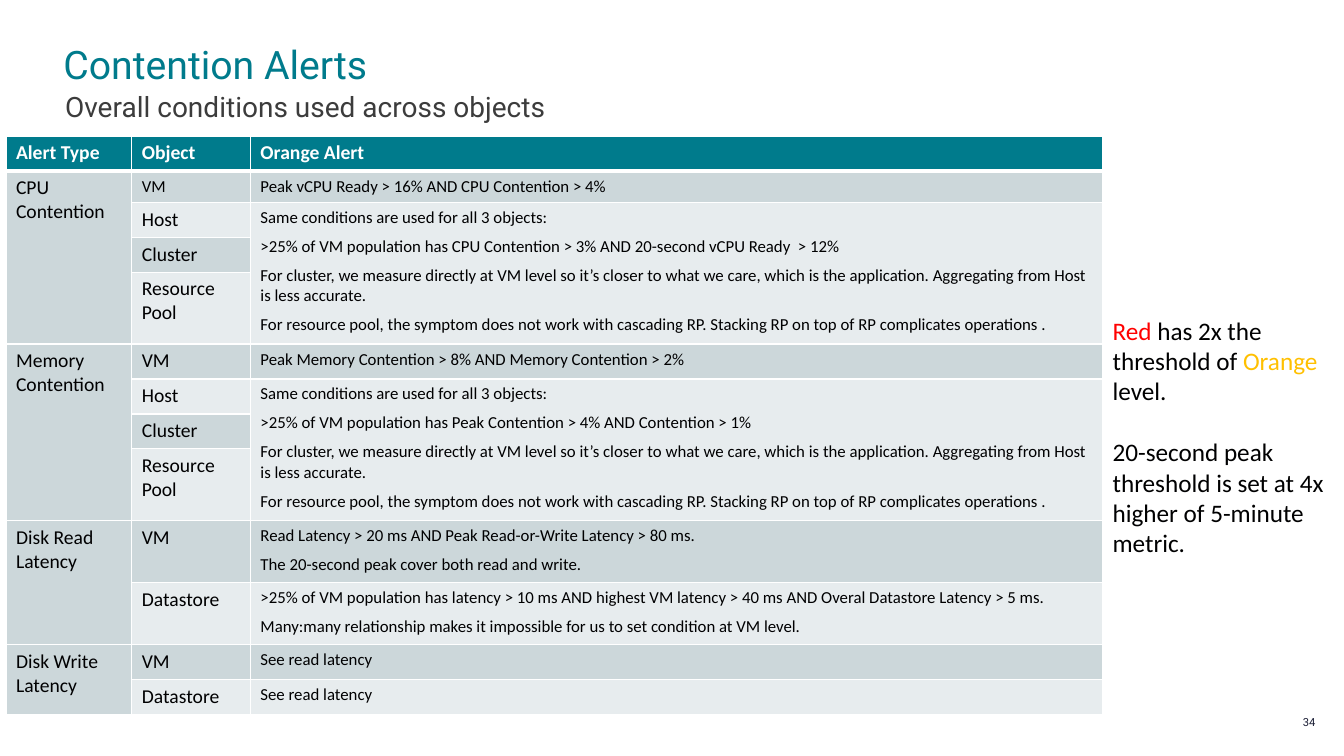
import pptx
import pptx.dml.color
import pptx.enum.shapes
import pptx.enum.text
import pptx.oxml
import pptx.oxml.ns
import pptx.util

Cm, Pt = pptx.util.Cm, pptx.util.Pt
ANCHOR = pptx.enum.text.MSO_ANCHOR
ALIGN = pptx.enum.text.PP_ALIGN

TEAL, WHITE, BLACK = "007B8C", "FFFFFF", "000001"
BANDS = ["E7ECEE", "CCD7DA"]
COLUMN_WIDTHS = [3.17, 2.99, 21.48]
ROW_HEIGHTS = [0.88, 0.79, 0.88, 0.88, 1.81, 0.88, 0.88, 0.88, 1.81, 1.56, 1.56, 0.88, 0.88]

HEADINGS = ["Alert Type", "Object", "Orange Alert"]
SAME = "Same conditions are used for all 3 objects:"
NOTES = [
    "For cluster, we measure directly at VM level so it’s closer to what we care, "
    "which is the application. Aggregating from Host is less accurate.",
    "For resource pool, the symptom does not work with cascading RP. "
    "Stacking RP on top of RP complicates operations .",
]
POOLED = ["Host", "Cluster", "Resource Pool"]

# Each alert type holds (objects, conditions) pairs; the objects of a pair share its conditions.
ALERTS = [
    ("CPU Contention", [
        (["VM"], ["Peak vCPU Ready > 16% AND CPU Contention > 4%"]),
        (POOLED, [SAME, ">25% of VM population has CPU Contention > 3% "
                        "AND 20-second vCPU Ready  > 12%", *NOTES]),
    ]),
    ("Memory Contention", [
        (["VM"], ["Peak Memory Contention > 8% AND Memory Contention > 2%"]),
        (POOLED, [SAME, ">25% of VM population has Peak Contention > 4% "
                        "AND Contention > 1%", *NOTES]),
    ]),
    ("Disk Read Latency", [
        (["VM"], ["Read Latency > 20 ms AND Peak Read-or-Write Latency > 80 ms.",
                  "The 20-second peak cover both read and write."]),
        (["Datastore"], [">25% of VM population has latency > 10 ms AND highest VM latency "
                         "> 40 ms AND Overal Datastore Latency > 5 ms.",
                         "Many:many relationship makes it impossible for us to set "
                         "condition at VM level."]),
    ]),
    ("Disk Write Latency", [
        (["VM"], ["See read latency"]),
        (["Datastore"], ["See read latency"]),
    ]),
]

THRESHOLDS = [
    [("Red", "FF0000"), (" has 2x the threshold of ", BLACK), ("Orange", "FFC000"),
     (" level.", BLACK)],
    [("20-second peak threshold is set at 4x higher of 5-minute metric.", BLACK)],
]


def rgb(colour):
    return pptx.dml.color.RGBColor.from_string(colour)


def set_font(font, size, colour, name="Calibri", bold=False):
    font.size, font.name, font.bold = Pt(size), name, bold
    font.color.rgb = rgb(colour)


def add_line_of_text(page, box, text, size, colour, anchor=ANCHOR.TOP, align=ALIGN.LEFT,
                     spacing=1.0):
    frame = page.shapes.add_textbox(*map(Cm, box)).text_frame
    frame.margin_left = frame.margin_top = frame.margin_right = frame.margin_bottom = 0
    frame.word_wrap = True
    frame.vertical_anchor = anchor
    para = frame.paragraphs[0]
    para.text, para.alignment, para.line_spacing = text, align, spacing
    set_font(para.font, size, colour, "Roboto")


def add_heading(page, box):
    left, top, width, height = box
    add_line_of_text(page, (left, top, width, 1.07), "Contention Alerts", 28, TEAL,
                     ANCHOR.BOTTOM, spacing=0.9)
    add_line_of_text(page, (left + 0.04, top + height - 0.69, width, 0.69),
                     "Overall conditions used across objects", 20, "3C3C3C")


def set_borders(cell, bottom):
    """Draw white lines, one point wide except at the bottom; call before filling the cell."""
    for side, width in (("L", 1), ("R", 1), ("T", 1), ("B", bottom)):
        cell._tc.get_or_add_tcPr().append(pptx.oxml.parse_xml(
            f'<a:ln{side} {pptx.oxml.ns.nsdecls("a")} w="{Pt(width)}"><a:solidFill>'
            f'<a:srgbClr val="{WHITE}"/></a:solidFill></a:ln{side}>'))


def write_cell(cell, lines, size, colour=BLACK, bold=False, gap=0):
    cell.text = "\n".join(lines)
    for para in cell.text_frame.paragraphs:
        para.space_after = Pt(gap)
        set_font(para.font, size, colour, bold=bold)


def add_alert_table(page, box):
    table = page.shapes.add_table(len(ROW_HEIGHTS), len(COLUMN_WIDTHS), *map(Cm, box)).table
    table.horz_banding = False
    for column, width in zip(table.columns, COLUMN_WIDTHS):
        column.width = Cm(width)
    for index, (row, height) in enumerate(zip(table.rows, ROW_HEIGHTS)):
        row.height = Cm(height)
        for cell in row.cells:
            set_borders(cell, 1 if index else 3)
            cell.fill.solid()
            cell.fill.fore_color.rgb = rgb(BANDS[index % 2] if index else TEAL)

    for column, heading in enumerate(HEADINGS):
        write_cell(table.cell(0, column), [heading], 14, WHITE, bold=True)

    row = 1
    for alert, rules in ALERTS:
        first = row
        for objects, conditions in rules:
            if len(objects) > 1:
                table.cell(row, 2).merge(table.cell(row + len(objects) - 1, 2))
            write_cell(table.cell(row, 2), conditions, 12, gap=6 if row > 1 else 0)
            for name in objects:
                write_cell(table.cell(row, 1), [name], 14 if row > 1 else 12)
                row += 1
        table.cell(first, 0).merge(table.cell(row - 1, 0))
        write_cell(table.cell(first, 0), [alert], 14)


def add_threshold_note(page, box):
    note = page.shapes.add_shape(pptx.enum.shapes.MSO_SHAPE.RECTANGLE, *map(Cm, box))
    note.shadow.inherit = False
    note.fill.solid()
    note.fill.fore_color.rgb = rgb(WHITE)
    note.line.fill.background()
    frame = note.text_frame
    frame.word_wrap = True
    frame.vertical_anchor = ANCHOR.TOP
    for index, spans in enumerate(THRESHOLDS):
        para = frame.add_paragraph() if index else frame.paragraphs[0]
        para.alignment = ALIGN.LEFT
        para.space_before = Pt(22 if index else 0)
        for text, colour in spans:
            span = para.add_run()
            span.text = text
            set_font(span.font, 18, colour)


def main():
    deck = pptx.Presentation()
    deck.slide_width, deck.slide_height = Cm(33.87), Cm(19.05)
    page = deck.slides.add_slide(deck.slide_layouts[6])
    add_line_of_text(page, (31.93, 17.96, 1.22, 0.51), "34", 8, "1B1E35",
                     ANCHOR.MIDDLE, ALIGN.RIGHT, 0.9)
    add_heading(page, (1.6, 1.14, 30.55, 1.81))
    add_alert_table(page, (0.15, 3.43, sum(COLUMN_WIDTHS), sum(ROW_HEIGHTS)))
    add_threshold_note(page, (27.79, 7.82, 5.92, 6.4))
    deck.save("out.pptx")


if __name__ == "__main__":
    main()
